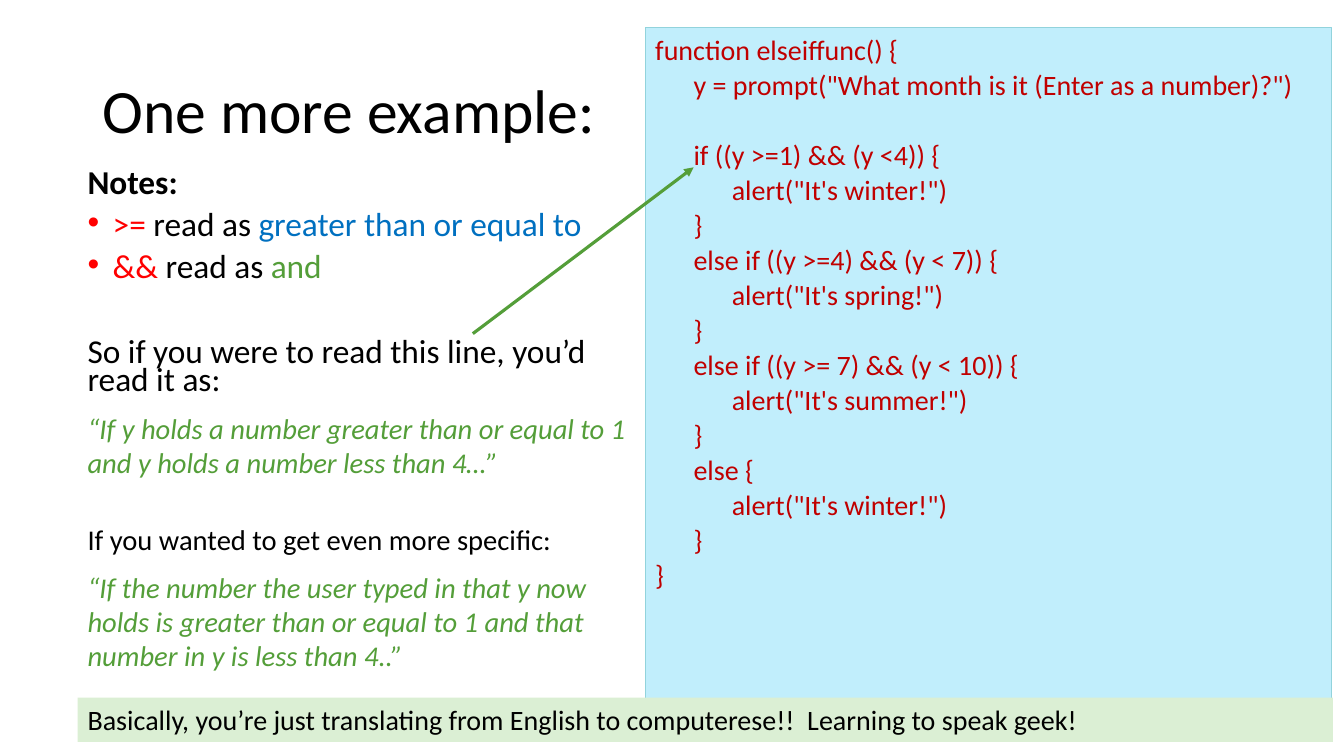
from lxml import etree
from pptx import Presentation
from pptx.dml.color import RGBColor
from pptx.enum.shapes import MSO_CONNECTOR, MSO_SHAPE
from pptx.enum.text import MSO_ANCHOR, PP_ALIGN
from pptx.oxml.ns import qn
from pptx.util import Inches, Pt

RECT, LINE = MSO_SHAPE.RECTANGLE, MSO_CONNECTOR.STRAIGHT
TOP, MIDDLE, LEFT = MSO_ANCHOR.TOP, MSO_ANCHOR.MIDDLE, PP_ALIGN.LEFT

BLACK = RGBColor(0x00, 0x00, 0x00)
RED = RGBColor(0xFF, 0x00, 0x00)
BLUE = RGBColor(0x00, 0x70, 0xC0)
GREEN = RGBColor(0x54, 0x9E, 0x39)
CRIMSON = RGBColor(0xC0, 0x00, 0x00)
SKY = RGBColor(0xC1, 0xEE, 0xFC)
TEAL = RGBColor(0x92, 0xD3, 0xDC)
MINT = RGBColor(0xDB, 0xEF, 0xD4)

# Content
TITLE = "One more example:"
FOOTER = ("Basically, you’re just translating from English to computerese!!  "
          "Learning to speak geek!")

BIG = {"size": Pt(23.8)}
SMALL = {"size": Pt(20.4)}
QUOTE = {"size": Pt(20.4), "italic": True}
TIGHT = {"line_spacing": 0.7, "space_before": Pt(10)}
LOOSE = {"line_spacing": 1.0, "space_before": Pt(10)}

# Each note: runs of (text, colour), font, paragraph format, bullet
NOTES = [
    ([("Notes:", BLACK)], {**BIG, "bold": True}, TIGHT, False),
    ([(">=", RED), (" read as ", BLACK), ("greater than or equal to", BLUE)],
     BIG, TIGHT, True),
    ([("&&", RED), (" read as ", BLACK), ("and", GREEN)], BIG, TIGHT, True),
    ([("So if you were to read this line, you’d read it as:", BLACK)],
     BIG, {**TIGHT, "space_before": Pt(40.3)}, False),
    ([("“If y holds a number greater than or equal to 1 and y holds "
       "a number less than 4…”", GREEN)], QUOTE, LOOSE, False),
    ([("If you wanted to get even more specific:", BLACK)],
     SMALL, {**TIGHT, "space_before": Pt(37.4)}, False),
    ([("“If the number the user typed in that y now holds is greater than "
       "or equal to 1 and that number in y is less than 4..”", GREEN)],
     QUOTE, LOOSE, False),
]

# Each code line: indent level, text
CODE = [
    (0, "function elseiffunc() {"),
    (1, 'y = prompt("What month is it (Enter as a number)?")'),
    (1, "if ((y >=1) && (y <4)) {"),
    (2, 'alert("It\'s winter!")'),
    (1, "}"),
    (1, "else if ((y >=4) && (y < 7)) {"),
    (2, 'alert("It\'s spring!")'),
    (1, "}"),
    (1, "else if ((y >= 7) && (y < 10)) {"),
    (2, 'alert("It\'s summer!")'),
    (1, "}"),
    (1, "else {"),
    (2, 'alert("It\'s winter!")'),
    (1, "}"),
    (0, "}"),
]
GAP_LINE = 2  # code line with an empty line's worth of space above
TAB = 0.38


def set_all(item, values):
    for name, value in values.items():
        setattr(item, name, value)


def add_box(slide, box, fill=None, edge=None, anchor=TOP):
    """Add a text box, or a rectangle when a fill is given."""
    place = [Inches(v) for v in box]
    if fill is None:
        shape = slide.shapes.add_textbox(*place)
    else:
        shape = slide.shapes.add_shape(RECT, *place)
        shape.shadow.inherit = False
        shape.fill.solid()
        shape.fill.fore_color.rgb = fill
        if edge is None:
            shape.line.fill.background()
        else:
            shape.line.color.rgb = edge
            shape.line.width = Pt(0.75)
    set_all(shape.text_frame, {"word_wrap": True, "vertical_anchor": anchor})
    return shape.text_frame


def add_para(frame, first, runs, font, form):
    para = frame.paragraphs[0] if first else frame.add_paragraph()
    set_all(para, {"alignment": LEFT, **form})
    for text, color in runs:
        run = para.add_run()
        run.text = text
        set_all(run.font, {"name": "Calibri", **font})
        run.font.color.rgb = color
    return para


def indent(para, left, hang=0):
    props = para._p.get_or_add_pPr()
    props.set("marL", str(Inches(left)))
    props.set("indent", str(-Inches(hang)))
    return props


def add_bullet(para):
    props = indent(para, 0.25, 0.25)
    etree.SubElement(props, qn("a:buFont")).set("typeface", "Arial")
    etree.SubElement(props, qn("a:buChar")).set("char", "•")


def add_arrow(slide, start, end):
    arrow = slide.shapes.add_connector(LINE, *[Inches(v) for v in start + end])
    arrow.line.color.rgb = GREEN
    arrow.line.width = Pt(2.25)
    tip = etree.SubElement(arrow.line._get_or_add_ln(), qn("a:tailEnd"))
    tip.set("type", "triangle")
    etree.SubElement(arrow._element.spPr, qn("a:effectLst"))


def main():
    deck = Presentation()
    deck.slide_width, deck.slide_height = Inches(13.33), Inches(7.5)
    slide = deck.slides.add_slide(deck.slide_layouts[6])

    # Title
    frame = add_box(slide, (0.92, 0.4, 11.5, 1.45), anchor=MIDDLE)
    add_para(frame, True, [(TITLE, BLACK)], {"size": Pt(44)},
             {"line_spacing": 0.9})

    # Notes
    frame = add_box(slide, (0.77, 1.66, 5.54, 5.24))
    for i, (runs, font, form, dot) in enumerate(NOTES):
        para = add_para(frame, i == 0, runs, font, form)
        if dot:
            add_bullet(para)

    # Code panel
    frame = add_box(slide, (6.4, 0.27, 6.81, 7.05), SKY, TEAL)
    for i, (level, text) in enumerate(CODE):
        gap = Pt(26.4 if i == GAP_LINE else 1)
        para = add_para(frame, i == 0, [(text, CRIMSON)], {"size": Pt(20)},
                        {"space_before": gap})
        indent(para, level * TAB)

    # Arrow from the note to the condition
    add_arrow(slide, (4.69, 3.31), (6.88, 1.66))

    # Footer band
    frame = add_box(slide, (0.77, 6.92, 12.45, 0.44), MINT)
    add_para(frame, True, [(FOOTER, BLACK)], {"size": Pt(20)}, {})

    deck.save("out.pptx")


if __name__ == "__main__":
    main()
